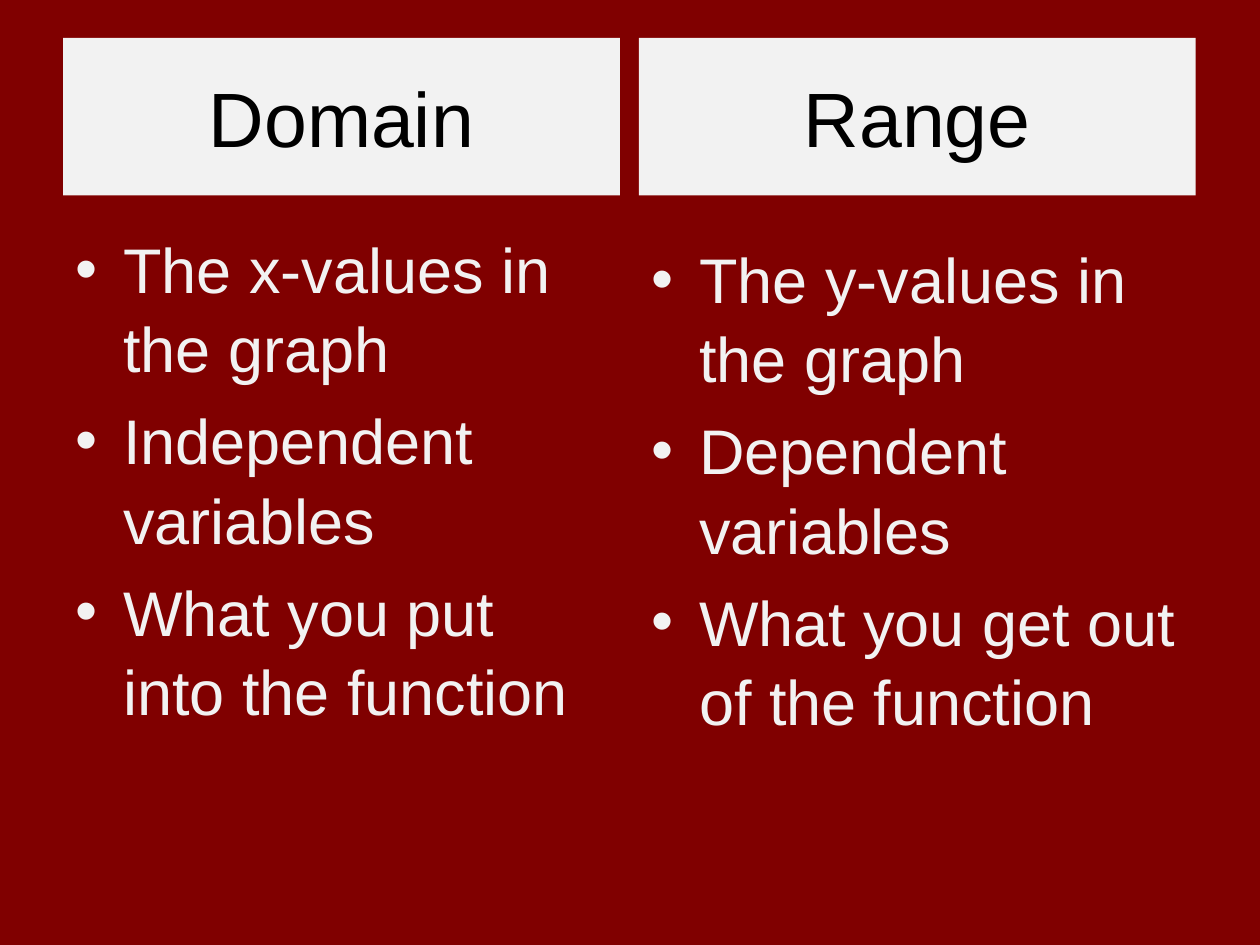
from dataclasses import dataclass

from lxml import etree
from pptx import Presentation
from pptx.dml.color import RGBColor
from pptx.enum.shapes import MSO_SHAPE
from pptx.enum.text import MSO_ANCHOR, PP_ALIGN
from pptx.oxml.ns import qn
from pptx.util import Inches, Pt

RECT = MSO_SHAPE.RECTANGLE
MIDDLE, TOP = MSO_ANCHOR.MIDDLE, MSO_ANCHOR.TOP
CENTER, LEFT = PP_ALIGN.CENTER, PP_ALIGN.LEFT

FONT = "Arial"
MAROON, PALE, BLACK = "800000", "F2F2F2", "000000"
COL_W, HEAD_TOP, HEAD_H, BODY_H = 4.42, 0.3, 1.25, 4.95
INDENT = 0.38


@dataclass
class Column:
    heading: str
    left: float
    body_top: float
    points: list[str]


COLUMNS = [
    Column("Domain", 0.5, 1.75, [
        "The x-values in the graph",
        "Independent variables",
        "What you put into the function",
    ]),
    Column("Range", 5.07, 1.83, [
        "The y-values in the graph",
        "Dependent variables",
        "What you get out of the function",
    ]),
]


def rgb(color: str) -> RGBColor:
    return RGBColor.from_string(color)


def add_run(p, text: str, size: int, color: str) -> None:
    r = p.add_run()
    r.text = text
    r.font.name = FONT
    r.font.size = Pt(size)
    r.font.color.rgb = rgb(color)


def add_bullet(p) -> None:
    pPr = p._p.get_or_add_pPr()
    pPr.set("marL", str(Inches(INDENT)))
    pPr.set("indent", str(-Inches(INDENT)))
    etree.SubElement(pPr, qn("a:buFont"), typeface=FONT)
    etree.SubElement(pPr, qn("a:buChar"), char="•")


def format_heading(sp, col: Column) -> None:
    sp.left, sp.top = Inches(col.left), Inches(HEAD_TOP)
    sp.width, sp.height = Inches(COL_W), Inches(HEAD_H)
    sp.fill.solid()
    sp.fill.fore_color.rgb = rgb(PALE)
    sp.line.fill.background()
    tf = sp.text_frame
    tf.word_wrap = True
    tf.vertical_anchor = MIDDLE
    p = tf.paragraphs[0]
    p.alignment = CENTER
    add_run(p, col.heading, 44, BLACK)


def add_points(s, col: Column) -> None:
    sp = s.shapes.add_textbox(Inches(col.left), Inches(col.body_top),
                              Inches(COL_W), Inches(BODY_H))
    tf = sp.text_frame
    tf.word_wrap = True
    tf.vertical_anchor = TOP
    for i, point in enumerate(col.points):
        p = tf.add_paragraph() if i else tf.paragraphs[0]
        p.alignment = LEFT
        p.line_spacing = 1.05
        p.space_before = Pt(7.2)
        add_bullet(p)
        add_run(p, point, 36, PALE)


def main() -> None:
    prs = Presentation()
    prs.slide_width, prs.slide_height = Inches(10), Inches(7.5)
    s = prs.slides.add_slide(prs.slide_layouts[5])
    s.background.fill.solid()
    s.background.fill.fore_color.rgb = rgb(MAROON)

    # The first heading is the slide title, the second a matching box
    for i, col in enumerate(COLUMNS):
        if i == 0:
            heading = s.shapes.title
        else:
            heading = s.shapes.add_shape(RECT, 0, 0, 0, 0)
            heading.shadow.inherit = False
        format_heading(heading, col)
        add_points(s, col)

    prs.save("out.pptx")


if __name__ == "__main__":
    main()
